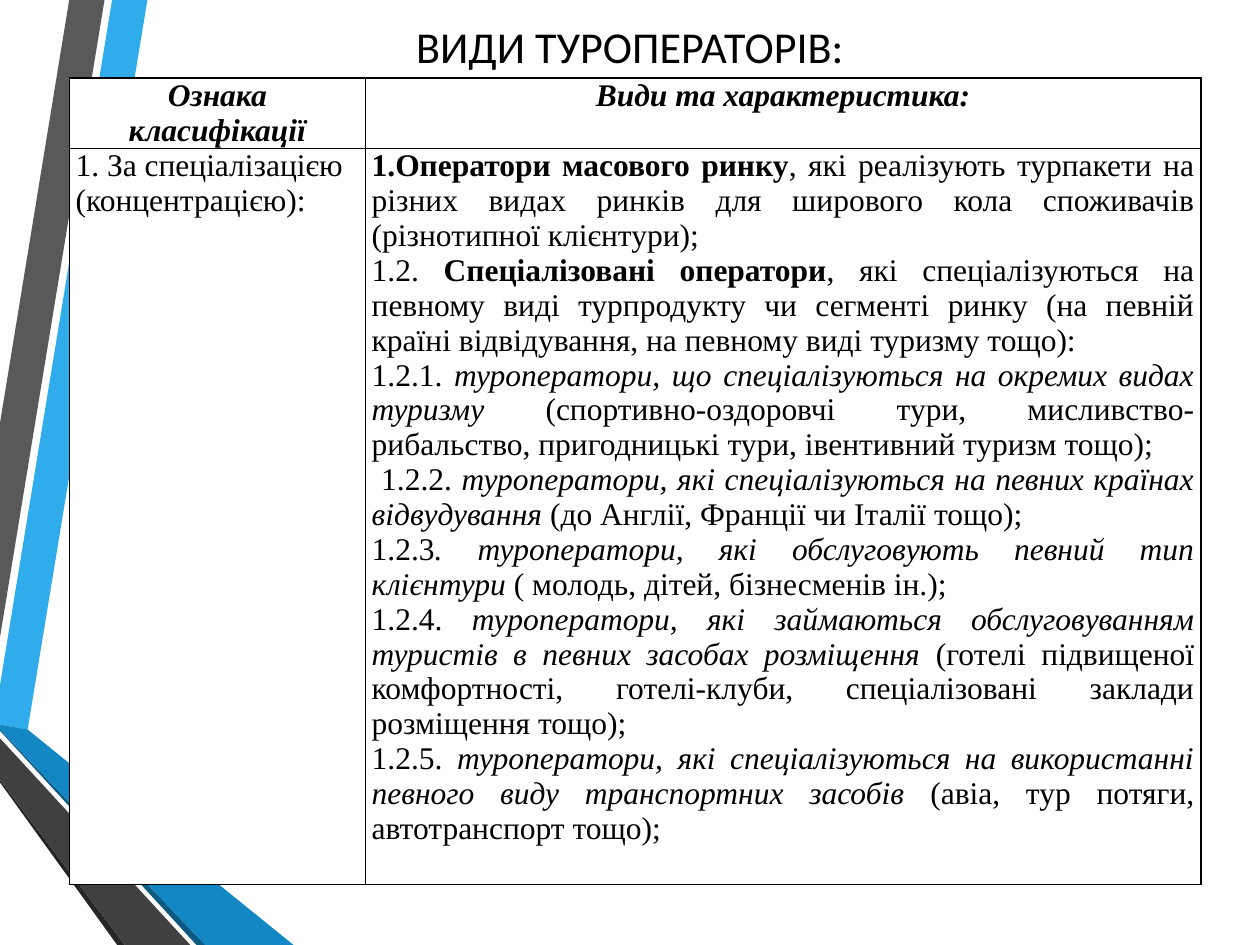
from lxml.etree import SubElement
from pptx import Presentation
from pptx.dml.color import RGBColor
from pptx.enum.text import MSO_ANCHOR as ANCHOR, PP_ALIGN as ALIGN
from pptx.oxml.ns import qn
from pptx.util import Inches, Pt

BLACK = RGBColor(0x00, 0x00, 0x00)
WHITE = RGBColor(0xFF, 0xFF, 0xFF)
SKY = RGBColor(0x30, 0xAC, 0xEC)
BLUE = RGBColor(0x12, 0x87, 0xC3)
NAVY = RGBColor(0x0C, 0x5A, 0x82)
GRAY = RGBColor(0x59, 0x59, 0x59)
DARK = RGBColor(0x40, 0x40, 0x40)
COAL = RGBColor(0x26, 0x26, 0x26)


def add_run(p, text, size=18, font="Times New Roman", bold=False, italic=False):
    r = p.add_run()
    r.text = text
    r.font.size, r.font.name = Pt(size), font
    r.font.bold, r.font.italic = bold, italic
    r.font.color.rgb = BLACK


prs = Presentation()
prs.slide_width, prs.slide_height = Inches(10), Inches(7.5)
s = prs.slides.add_slide(prs.slide_layouts[5])

bands = [
    (SKY, [(0, 5.44), (0, 5.75), (0.22, 5.79), (1.17, 0), (0.89, 0)]),
    (GRAY, [(0.83, 0), (0.55, 0), (0, 3.36), (0, 5.06)]),
    (COAL, [(0, 6.19), (0, 6.21), (0.93, 7.5), (0.99, 7.5)]),
    (NAVY, [(0, 5.79), (0, 5.8), (1.56, 7.5), (1.63, 7.5)]),
    (BLUE, [(0, 5.79), (1.63, 7.5), (2.33, 7.5), (0.22, 5.79), (0, 5.75)]),
    (DARK, [(0, 6.19), (0.99, 7.5), (1.51, 7.5), (0, 5.86)]),
]
for color, points in bands:
    corners = [(Inches(x), Inches(y)) for x, y in points]
    fb = s.shapes.build_freeform(*corners[0])
    fb.add_line_segments(corners[1:], close=True)
    sp = fb.convert_to_shape()
    sp.shadow.inherit = False
    sp.fill.solid()
    sp.fill.fore_color.rgb = color
    sp.line.fill.background()

title = s.shapes.title
title.left, title.top = Inches(0.5), Inches(0.12)
title.width, title.height = Inches(9), Inches(0.48)
tf = title.text_frame
tf.vertical_anchor = ANCHOR.MIDDLE
p = tf.paragraphs[0]
p.alignment = ALIGN.CENTER
add_run(p, "ВИДИ ТУРОПЕРАТОРІВ:", size=25.2, font="Calibri")

BOLD, ITALIC = {"bold": True}, {"italic": True}
HEAD = {"bold": True, "italic": True}
operators = [
    [("Оператори масового ринку", BOLD),
     (", які реалізують турпакети на різних видах ринків для ширового кола "
      "споживачів (різнотипної клієнтури);", {})],
    [("1.2. ", {}), ("Спеціалізовані оператори", BOLD),
     (", які спеціалізуються на певному виді турпродукту чи сегменті ринку "
      "(на певній країні відвідування, на певному виді туризму тощо):", {})],
    [("1.2.1. ", {}),
     ("туроператори, що спеціалізуються на окремих видах туризму", ITALIC),
     (" (спортивно-оздоровчі тури, мисливство- рибальство, пригодницькі тури, "
      "івентивний туризм тощо);", {})],
    [(" 1.2.2. ", {}),
     ("туроператори, які спеціалізуються на певних країнах відвудування", ITALIC),
     (" (до Англії, Франції чи Італії тощо);", {})],
    [("1.2.3", {}),
     (". туроператори, які обслуговують певний тип клієнтури", ITALIC),
     (" ( молодь, дітей, бізнесменів ін.);", {})],
    [("1.2.4. ", {}),
     ("туроператори, які займаються обслуговуванням туристів в певних засобах "
      "розміщення", ITALIC),
     (" (готелі підвищеної комфортності, готелі-клуби, спеціалізовані заклади "
      "розміщення тощо);", {})],
    [("1.2.5. ", {}),
     ("туроператори, які спеціалізуються на використанні певного виду "
      "транспортних засобів", ITALIC),
     (" (авіа, тур потяги, автотранспорт тощо);", {})],
]
rows = [
    [(ALIGN.CENTER, [[("Ознака класифікації", HEAD)]]),
     (ALIGN.CENTER, [[("Види та характеристика:", HEAD)]])],
    [(ALIGN.LEFT, [[("1. За спеціалізацією (концентрацією):", {})]]),
     (ALIGN.JUSTIFY, operators)],
]

table = s.shapes.add_table(2, 2, Inches(0.55), Inches(0.62),
                           Inches(8.98), Inches(6.4)).table
for col, width in zip(table.columns, (2.35, 6.63)):
    col.width = Inches(width)
for row, height in zip(table.rows, (0.56, 5.84)):
    row.height = Inches(height)

for i, row in enumerate(rows):
    for j, (align, paragraphs) in enumerate(row):
        cell = table.cell(i, j)
        cell.margin_left = cell.margin_right = Inches(0.05)
        cell.margin_top = cell.margin_bottom = 0
        tcPr = cell._tc.get_or_add_tcPr()
        for side in ("a:lnL", "a:lnR", "a:lnT", "a:lnB"):
            ln = SubElement(tcPr, qn(side), w=str(Pt(1)))
            fill = SubElement(ln, qn("a:solidFill"))
            SubElement(fill, qn("a:srgbClr"), val=str(BLACK))
        cell.fill.solid()
        cell.fill.fore_color.rgb = WHITE
        tf = cell.text_frame
        for k, runs in enumerate(paragraphs):
            p = tf.add_paragraph() if k else tf.paragraphs[0]
            p.alignment = align
            for text, style in runs:
                add_run(p, text, **style)

pPr = table.cell(1, 1).text_frame.paragraphs[0]._p.get_or_add_pPr()
pPr.set("marL", "0")
pPr.set("indent", str(Inches(-0.31)))
SubElement(pPr, qn("a:buFont"), typeface="+mj-lt")
SubElement(pPr, qn("a:buAutoNum"), type="arabicPeriod")
tabs = SubElement(pPr, qn("a:tabLst"))
for pos in (0.02, 0.25):
    SubElement(tabs, qn("a:tab"), pos=str(Inches(pos)), algn="l")

prs.save("out.pptx")
